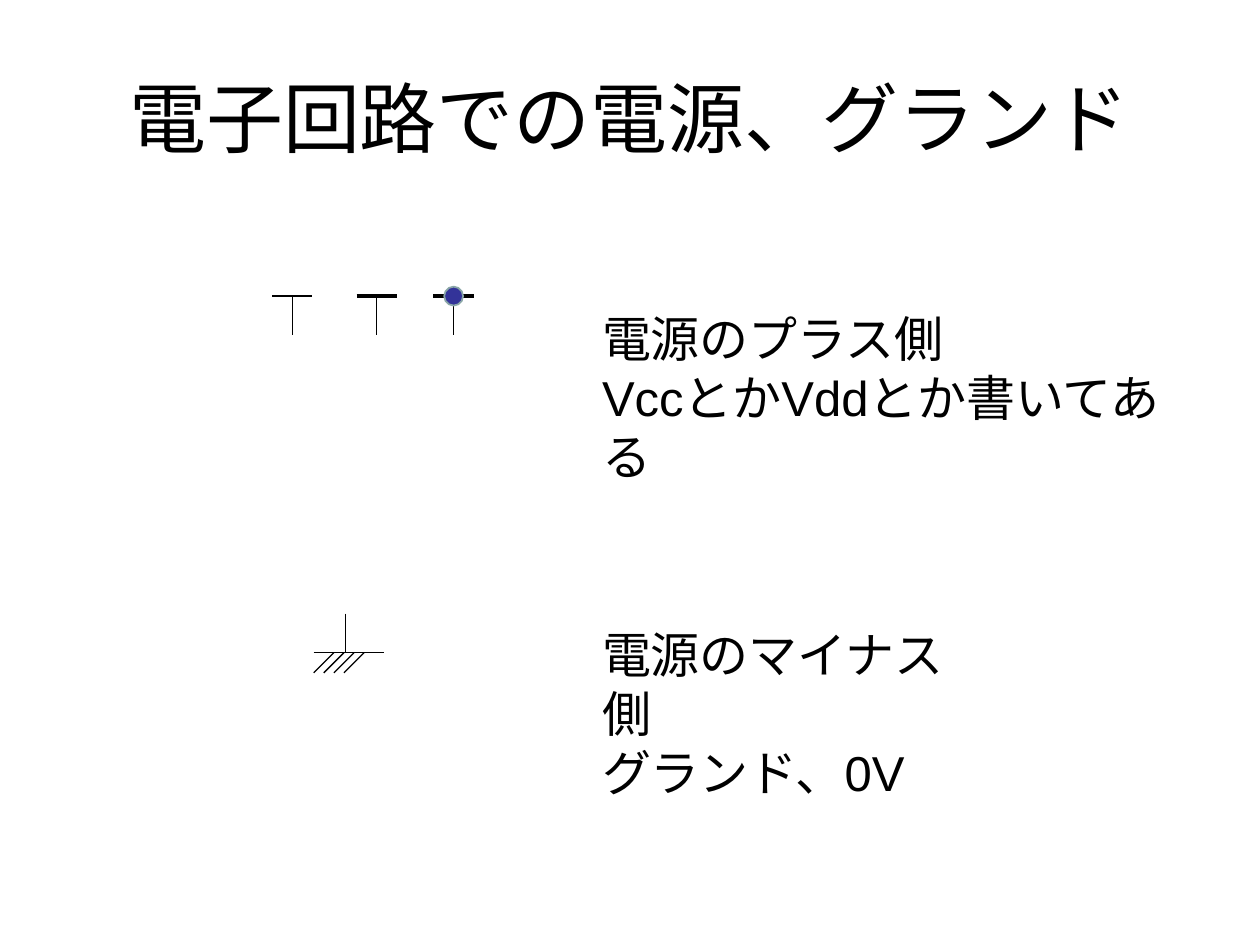
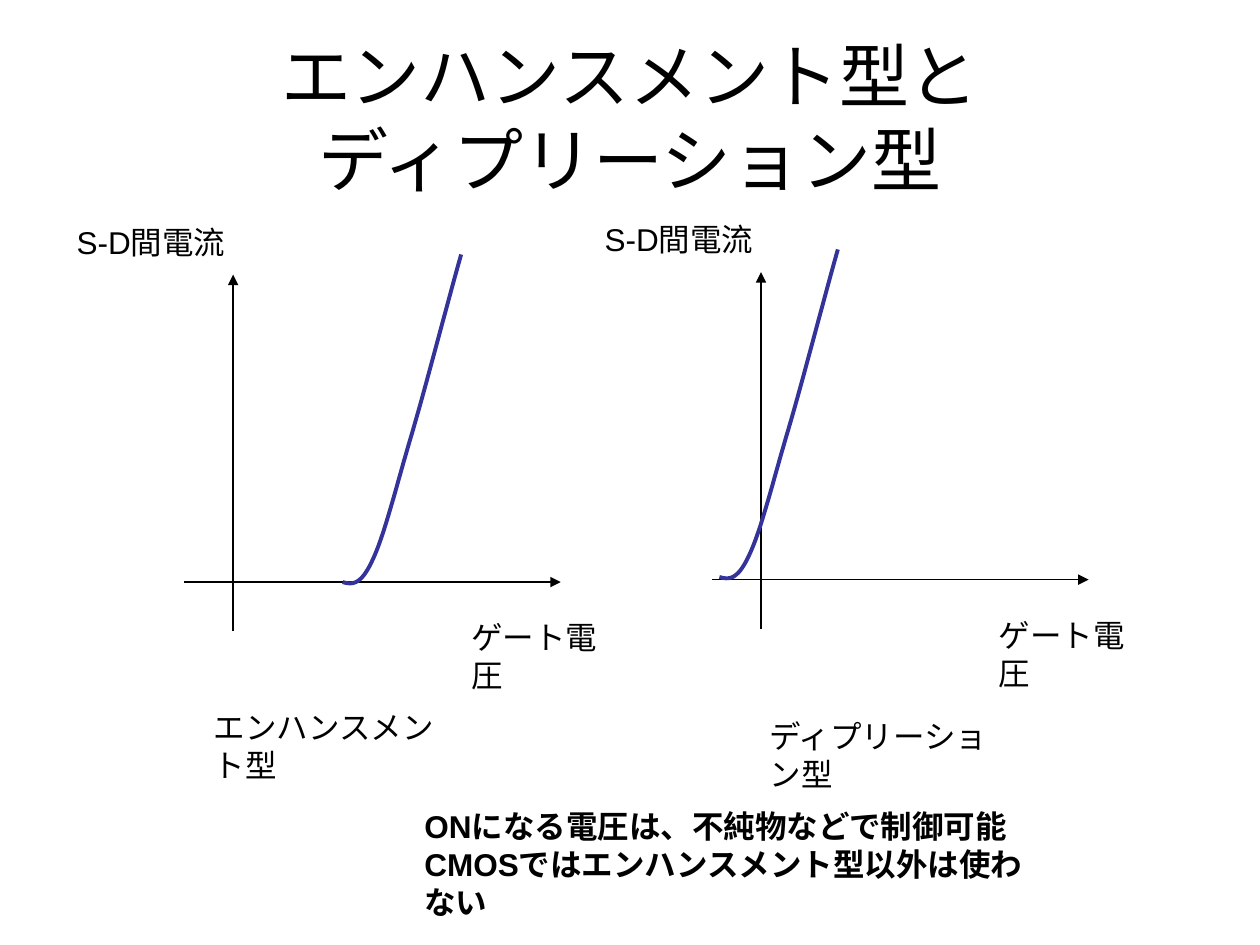
from dataclasses import dataclass
from typing import NamedTuple

from lxml import etree
from pptx import Presentation
from pptx.dml.color import RGBColor
from pptx.enum import shapes, text
from pptx.oxml import ns
from pptx.util import Inches, Pt


@dataclass(frozen=True)
class Theme:
    font: str = "Arial"
    ink: RGBColor = RGBColor(0x00, 0x00, 0x00)
    accent: RGBColor = RGBColor(0x33, 0x33, 0x99)
    dot_edge: RGBColor = RGBColor(0x8A, 0xA6, 0xA8)
    title: int = 44
    long_title: int = 40
    body: int = 28
    label: int = 18
    thin: float = 0.75
    edge: float = 1
    thick: float = 2.25


THEME = Theme()


class Point(NamedTuple):
    x: float
    y: float

    def shift(self, dx: float, dy: float) -> "Point":
        return Point(self.x + dx, self.y + dy)


@dataclass(frozen=True)
class Label:
    at: Point
    width: float
    height: float
    lines: tuple[str, ...]
    size: int = THEME.label
    bold: bool = False


@dataclass(frozen=True)
class SupplySymbol:
    top: Point
    bar_weight: float = THEME.thin
    dotted: bool = False


@dataclass(frozen=True)
class Graph:
    origin: Point
    curve_start: Point
    caption: Label


SUPPLIES = (
    SupplySymbol(Point(2.32, 2.35)),
    SupplySymbol(Point(2.99, 2.35), THEME.thick),
    SupplySymbol(Point(3.6, 2.35), THEME.thick, dotted=True),
)
GROUND = Point(2.74, 5.18)
LEAD = 0.31
BAR_HALF = 0.16
DOT = 0.15

SUPPLY_LABELS = (
    Label(Point(4.68, 2.4), 4.77, 1.04,
          ("電源のプラス側", "VccとかVddとか書いてある"), THEME.body),
    Label(Point(4.68, 4.91), 3.18, 1.04,
          ("電源のマイナス側", "グランド、0V"), THEME.body),
)

GRAPHS = (
    Graph(Point(1.85, 4.62), Point(2.72, 4.62),
          Label(Point(1.6, 5.57), 2.14, 0.4, ("エンハンスメント型",))),
    Graph(Point(6.04, 4.6), Point(5.71, 4.58),
          Label(Point(6.01, 5.64), 2.1, 0.4, ("ディプリーション型",))),
)
# Bezier segments of the current curve, relative to its start
CURVE = (
    (Point(0, 0), Point(0.07, 0.02), Point(0.14, 0.03), Point(0.23, -0.16)),
    (Point(0.23, -0.16), Point(0.33, -0.36), Point(0.43, -0.78), Point(0.55, -1.18)),
    (Point(0.55, -1.18), Point(0.67, -1.59), Point(0.8, -2.1), Point(0.94, -2.6)),
)
CURVE_STEPS = 16
CONCLUSION = Label(
    Point(3.27, 6.36), 5.08, 0.7,
    ("ONになる電圧は、不純物などで制御可能",
     "CMOSではエンハンスメント型以外は使わない"), bold=True)


def add_label(s, label: Label):
    tb = s.shapes.add_textbox(Inches(label.at.x), Inches(label.at.y),
                              Inches(label.width), Inches(label.height))
    tf = tb.text_frame
    tf.word_wrap = True
    for i, line in enumerate(label.lines):
        p = tf.add_paragraph() if i else tf.paragraphs[0]
        p.text = line
        p.font.name = THEME.font
        p.font.size = Pt(label.size)
        p.font.bold = label.bold
        p.font.color.rgb = THEME.ink
    return tf


def add_title(s, title: str, size: int) -> None:
    tf = add_label(s, Label(Point(0.5, 0.3), 9, 1.25, (title,), size))
    tf.vertical_anchor = text.MSO_ANCHOR.MIDDLE
    tf.paragraphs[0].alignment = text.PP_ALIGN.CENTER


def add_line(s, start: Point, end: Point, weight: float = THEME.thin,
             arrow: bool = False) -> None:
    c = s.shapes.add_connector(shapes.MSO_CONNECTOR.STRAIGHT,
                               Inches(start.x), Inches(start.y),
                               Inches(end.x), Inches(end.y))
    c.line.color.rgb = THEME.ink
    c.line.width = Pt(weight)
    if arrow:
        etree.SubElement(c.line._get_or_add_ln(), ns.qn("a:tailEnd"), type="triangle")
    etree.SubElement(c._element.spPr, ns.qn("a:effectLst"))


def add_supply(s, symbol: SupplySymbol) -> None:
    top = symbol.top
    add_line(s, top.shift(-BAR_HALF, 0), top.shift(BAR_HALF, 0), symbol.bar_weight)
    add_line(s, top, top.shift(0, LEAD))
    if symbol.dotted:
        dot = s.shapes.add_shape(shapes.MSO_SHAPE.OVAL,
                                 Inches(top.x - DOT / 2), Inches(top.y - DOT / 2),
                                 Inches(DOT), Inches(DOT))
        dot.shadow.inherit = False
        dot.fill.solid()
        dot.fill.fore_color.rgb = THEME.accent
        dot.line.color.rgb = THEME.dot_edge
        dot.line.width = Pt(THEME.edge)


def add_ground(s, base: Point) -> None:
    add_line(s, base.shift(0, -LEAD), base)
    add_line(s, base.shift(-0.25, 0), base.shift(0.31, 0))
    for i in range(4):
        hatch = base.shift(-0.09 + 0.08 * i, 0)
        add_line(s, hatch, hatch.shift(-0.16, 0.16))


def bezier(a: Point, b: Point, c: Point, d: Point, t: float) -> Point:
    u = 1 - t
    return Point(*(u**3 * p + 3 * u * u * t * q + 3 * u * t * t * v + t**3 * w
                   for p, q, v, w in zip(a, b, c, d)))


def add_curve(s, start: Point) -> None:
    points = [start.shift(*bezier(*segment, step / CURVE_STEPS))
              for segment in CURVE for step in range(1, CURVE_STEPS + 1)]
    fb = s.shapes.build_freeform(Inches(start.x), Inches(start.y))
    fb.add_line_segments([(Inches(p.x), Inches(p.y)) for p in points], close=False)
    curve = fb.convert_to_shape()
    curve.shadow.inherit = False
    curve.fill.background()
    curve.line.color.rgb = THEME.accent
    curve.line.width = Pt(THEME.thick)


def add_graph(s, graph: Graph) -> None:
    o = graph.origin
    add_line(s, o.shift(-0.39, 0), o.shift(2.6, 0), arrow=True)
    add_line(s, o.shift(0, 0.39), o.shift(0, -2.44), arrow=True)
    add_label(s, Label(o.shift(1.79, 0.24), 1.34, 0.4, ("ゲート電圧",)))
    add_label(s, Label(o.shift(-1.34, -2.9), 1.38, 0.4, ("S-D間電流",)))
    add_curve(s, graph.curve_start)
    add_label(s, graph.caption)


def build_supply_slide(s) -> None:
    add_title(s, "電子回路での電源、グランド", THEME.title)
    for symbol in SUPPLIES:
        add_supply(s, symbol)
    add_ground(s, GROUND)
    for label in SUPPLY_LABELS:
        add_label(s, label)


def build_threshold_slide(s) -> None:
    add_title(s, "エンハンスメント型と\vディプリーション型", THEME.long_title)
    for graph in GRAPHS:
        add_graph(s, graph)
    add_label(s, CONCLUSION)


def main() -> None:
    prs = Presentation()
    prs.slide_width, prs.slide_height = Inches(10), Inches(7.5)
    for build in (build_supply_slide, build_threshold_slide):
        build(prs.slides.add_slide(prs.slide_layouts[6]))
    prs.save("out.pptx")


if __name__ == "__main__":
    main()
